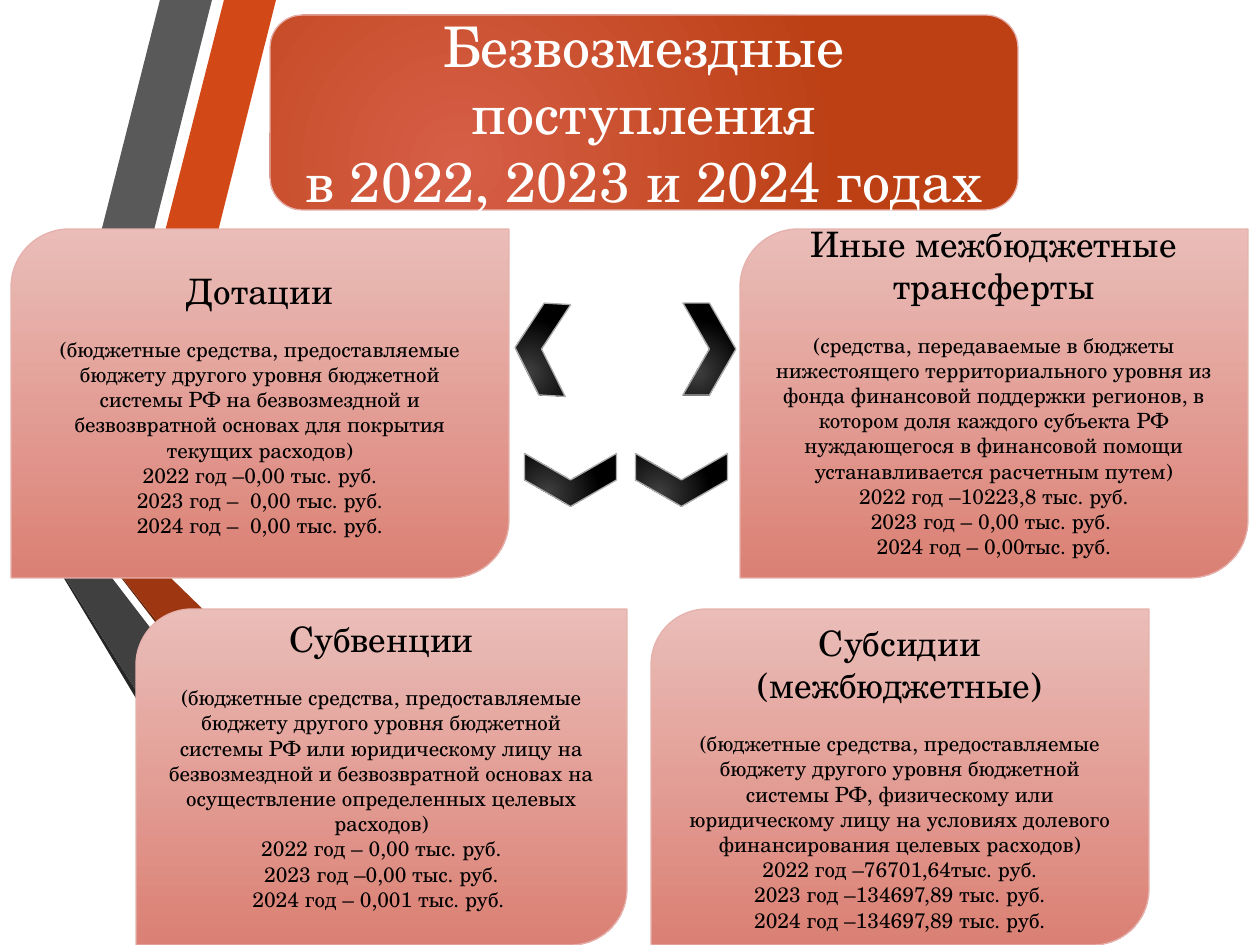
from dataclasses import dataclass
from typing import NamedTuple

from lxml.etree import SubElement
from pptx import Presentation
from pptx.dml.color import RGBColor
from pptx.enum.shapes import MSO_SHAPE
from pptx.enum.text import MSO_ANCHOR, PP_ALIGN
from pptx.oxml.ns import qn
from pptx.util import Emu, Pt

EMU_PER_PX = 914400 / 126


@dataclass(frozen=True)
class Theme:
    font: str = "TeX Gyre Schola"
    title_size: int = 32
    heading_size: int = 20
    body_size: int = 12
    heading_gap: float = 14.4
    line_width: float = 0.75
    title_text: str = "FFFFFF"
    card_text: str = "000000"
    title_fill: tuple[str, str] = ("D65E46", "BC4014")
    card_fill: tuple[str, str] = ("EABDB8", "DB8074")
    arrow_fill: tuple[str, str] = ("404040", "000000")
    outline: str = "E6B1AC"
    arrow_outline: str = "ABABAB"


THEME = Theme()


class Box(NamedTuple):
    left: int
    top: int
    width: int
    height: int


class Ribbon(NamedTuple):
    color: str
    points: list[tuple[int, int]]


class Arrow(NamedTuple):
    box: Box
    rotation: float


@dataclass(frozen=True)
class Card:
    box: Box
    heading: str
    lines: tuple[str, ...]
    bottom_gap: int = 0


RIBBONS = [
    Ribbon("D34817", [(88, 534), (139, 547), (276, 0), (224, 0)]),
    Ribbon("595959", [(212, 0), (160, 0), (28, 520), (78, 532)]),
    Ribbon("262626", [(29, 520), (284, 945), (296, 945)]),
    Ribbon("69240C", [(416, 945), (89, 536), (404, 945)]),
    Ribbon("9E3611", [(88, 534), (89, 536), (416, 945), (548, 945), (139, 547)]),
    Ribbon("404040", [(394, 945), (86, 544), (78, 532), (28, 520), (29, 520), (296, 945)]),
]

TITLE_BOX = Box(270, 15, 748, 195)
TITLE_LINES = ("Безвозмездные поступления", "в 2022, 2023 и 2024 годах")

CARDS = [
    Card(Box(11, 229, 498, 349), "Дотации", (
        "(бюджетные средства, предоставляемые бюджету другого уровня бюджетной системы РФ "
        "на безвозмездной и безвозвратной основах для покрытия текущих расходов)",
        "2022 год –0,00 тыс. руб.",
        "2023 год –  0,00 тыс. руб.",
        "2024 год –  0,00 тыс. руб.")),
    Card(Box(136, 609, 491, 336), "Субвенции", (
        "(бюджетные средства, предоставляемые бюджету другого уровня бюджетной системы РФ "
        "или юридическому лицу на безвозмездной и безвозвратной основах "
        "на осуществление определенных целевых расходов)",
        "2022 год – 0,00 тыс. руб.",
        "2023 год –0,00 тыс. руб.",
        "2024 год – 0,001 тыс. руб. "), bottom_gap=25),
    Card(Box(651, 609, 498, 336), "Субсидии (межбюджетные)", (
        "(бюджетные средства, предоставляемые бюджету другого уровня бюджетной системы РФ, "
        "физическому или юридическому лицу на условиях долевого финансирования целевых расходов)",
        "2022 год –76701,64тыс. руб.",
        "2023 год –134697,89 тыс. руб.",
        "2024 год –134697,89 тыс. руб.")),
    Card(Box(740, 229, 508, 349), "Иные межбюджетные трансферты", (
        "(средства, передаваемые в бюджеты нижестоящего территориального уровня из фонда "
        "финансовой поддержки регионов, в котором доля каждого субъекта РФ нуждающегося "
        "в финансовой помощи устанавливается расчетным путем)",
        "2022 год –10223,8 тыс. руб.",
        "2023 год – 0,00 тыс. руб. ",
        "2024 год – 0,00тыс. руб."), bottom_gap=25),
]

ARROWS = [
    Arrow(Box(683, 303, 53, 92), 0),
    Arrow(Box(655, 434, 53, 92), 90),
    Arrow(Box(544, 434, 53, 92), 90),
    Arrow(Box(515, 303, 53, 92), 183.4),
]


def px(length: float) -> Emu:
    return Emu(round(length * EMU_PER_PX))


def fill_gradient(shape, colors: tuple[str, str], radial: bool) -> None:
    """Fill downwards, or outwards from the lower left when radial."""
    shape.fill.gradient()
    shape.fill.gradient_angle = 270
    for stop, position, color in zip(shape.fill.gradient_stops, (0, 1), colors):
        stop.position = position
        stop.color.rgb = RGBColor.from_string(color)
    if radial:
        gradient = shape._element.spPr.find(qn("a:gradFill"))
        gradient.remove(gradient.find(qn("a:lin")))
        circle = SubElement(gradient, qn("a:path"), path="circle")
        SubElement(circle, qn("a:fillToRect"), l="50000", t="100000", r="100000", b="50000")


def add_panel(slide, preset: MSO_SHAPE, box: Box, colors: tuple[str, str],
              outline: str = THEME.outline, radial: bool = False):
    shape = slide.shapes.add_shape(preset, *map(px, box))
    shape.shadow.inherit = False
    fill_gradient(shape, colors, radial)
    shape.line.color.rgb = RGBColor.from_string(outline)
    shape.line.width = Pt(THEME.line_width)
    shape.text_frame.word_wrap = True
    shape.text_frame.vertical_anchor = MSO_ANCHOR.MIDDLE
    return shape


def add_text(shape, text: str, *, size: int, color: str, space_after: float = 0) -> None:
    """Add one centred paragraph, using the empty first one if it is free."""
    frame = shape.text_frame
    paragraph = frame.add_paragraph() if frame.text else frame.paragraphs[0]
    paragraph.alignment = PP_ALIGN.CENTER
    paragraph.space_after = Pt(space_after)
    run = paragraph.add_run()
    run.text = text
    run.font.name = THEME.font
    run.font.size = Pt(size)
    run.font.color.rgb = RGBColor.from_string(color)


def add_ribbon(slide, ribbon: Ribbon) -> None:
    builder = slide.shapes.build_freeform(*ribbon.points[0], scale=EMU_PER_PX)
    builder.add_line_segments(ribbon.points[1:], close=True)
    shape = builder.convert_to_shape()
    shape.shadow.inherit = False
    shape.fill.solid()
    shape.fill.fore_color.rgb = RGBColor.from_string(ribbon.color)
    shape.line.fill.background()


def add_title(slide) -> None:
    shape = add_panel(slide, MSO_SHAPE.ROUNDED_RECTANGLE, TITLE_BOX, THEME.title_fill, radial=True)
    for line in TITLE_LINES:
        add_text(shape, line, size=THEME.title_size, color=THEME.title_text)


def add_card(slide, card: Card) -> None:
    shape = add_panel(slide, MSO_SHAPE.ROUND_2_DIAG_RECTANGLE, card.box, THEME.card_fill)
    shape.text_frame.margin_bottom += px(card.bottom_gap)
    add_text(shape, card.heading, size=THEME.heading_size, color=THEME.card_text,
             space_after=THEME.heading_gap)
    for line in card.lines:
        add_text(shape, line, size=THEME.body_size, color=THEME.card_text)


def add_arrow(slide, arrow: Arrow) -> None:
    shape = add_panel(slide, MSO_SHAPE.CHEVRON, arrow.box, THEME.arrow_fill,
                      outline=THEME.arrow_outline, radial=True)
    shape.rotation = arrow.rotation


def main() -> None:
    presentation = Presentation()
    presentation.slide_width, presentation.slide_height = px(1260), px(945)
    slide = presentation.slides.add_slide(presentation.slide_layouts[6])
    for ribbon in RIBBONS:
        add_ribbon(slide, ribbon)
    add_title(slide)
    for card in CARDS:
        add_card(slide, card)
    for arrow in ARROWS:
        add_arrow(slide, arrow)
    presentation.save("out.pptx")


if __name__ == "__main__":
    main()
